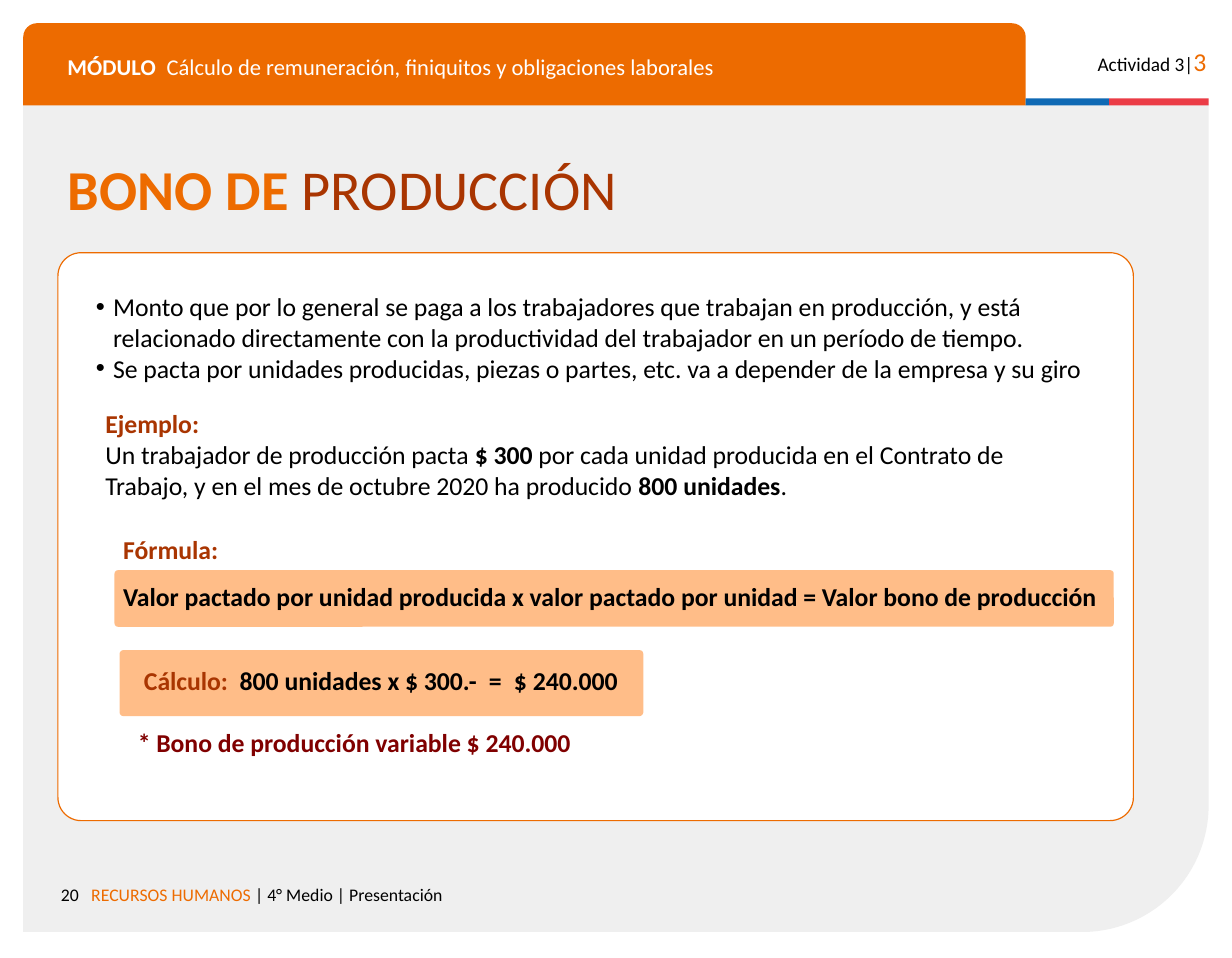
from dataclasses import dataclass

from lxml import etree
from pptx import Presentation
from pptx.dml.color import RGBColor
from pptx.enum.shapes import MSO_SHAPE
from pptx.enum.text import MSO_ANCHOR, PP_ALIGN
from pptx.oxml.ns import qn
from pptx.util import Cm, Pt

RECT, ROUNDED = MSO_SHAPE.RECTANGLE, MSO_SHAPE.ROUNDED_RECTANGLE
ONE_CORNER = MSO_SHAPE.ROUND_1_RECTANGLE
TOP_CORNERS = MSO_SHAPE.ROUND_2_SAME_RECTANGLE
LEFT, RIGHT = PP_ALIGN.LEFT, PP_ALIGN.RIGHT
TOP, MIDDLE = MSO_ANCHOR.TOP, MSO_ANCHOR.MIDDLE


@dataclass(frozen=True)
class Theme:
    font: str = "Calibri"
    bullet_font: str = "Arial"
    orange: str = "ED6B00"
    rust: str = "A93501"
    maroon: str = "800000"
    peach: str = "FFB375"
    grey: str = "EFEFEF"
    blue: str = "0F69B4"
    red: str = "EB3C46"
    black: str = "000000"
    white: str = "FFFFFF"
    title: int = 35
    body: int = 16
    header: int = 14
    activity: int = 12
    footer: int = 11


THEME = Theme()


@dataclass(frozen=True)
class Box:
    """A rectangle in centimetres."""
    left: float
    top: float
    width: float
    height: float

    def at(self, left, top, width, height):
        """Give a box placed from this box's top left corner."""
        return Box(self.left + left, self.top + top, width, height)

    def place(self, shape):
        for side in ("left", "top", "width", "height"):
            setattr(shape, side, Cm(getattr(self, side)))


def span(text, color=THEME.black, bold=False, size=THEME.body):
    return text, {"name": THEME.font, "size": Pt(size), "bold": bold}, color


def write(shape, paras, pad_x=0.25, pad_y=0.13, anchor=TOP, align=LEFT, spacing=1.0):
    """Fill a shape with paragraphs, each a list of spans."""
    frame = shape.text_frame
    settings = {
        "word_wrap": True, "vertical_anchor": anchor,
        "margin_left": Cm(pad_x), "margin_right": Cm(0.1),
        "margin_top": Cm(pad_y), "margin_bottom": Cm(pad_y),
    }
    if align == RIGHT:
        settings["margin_right"] = Cm(pad_x)
    for name, value in settings.items():
        setattr(frame, name, value)
    for index, spans in enumerate(paras):
        para = frame.add_paragraph() if index else frame.paragraphs[0]
        para.alignment, para.line_spacing = align, spacing
        for text, font, color in spans:
            run = para.add_run()
            run.text = text
            for name, value in font.items():
                setattr(run.font, name, value)
            run.font.color.rgb = RGBColor.from_string(color)
    return frame


def add_text(page, box, paras, **layout):
    shape = page.shapes.add_textbox(0, 0, 0, 0)
    box.place(shape)
    return write(shape, paras, **layout)


def add_block(page, kind, box, fill, corners=(), line=None):
    shape = page.shapes.add_shape(kind, 0, 0, 0, 0)
    box.place(shape)
    shape.shadow.inherit = False
    shape.fill.solid()
    shape.fill.fore_color.rgb = RGBColor.from_string(fill)
    if line:
        shape.line.color.rgb = RGBColor.from_string(line)
        shape.line.width = Pt(0.75)
    else:
        shape.line.fill.background()
    for index, corner in enumerate(corners):
        shape.adjustments[index] = corner
    return shape


def add_highlight(page, box, spans, pad_x):
    bar = add_block(page, ROUNDED, box, THEME.peach, [0.06])
    color = bar.element.spPr.find(qn("a:solidFill"))[0]
    etree.SubElement(color, qn("a:alpha"), val="86000")
    frame = write(bar, [spans], pad_x=pad_x, anchor=MIDDLE)
    frame.margin_bottom = Cm(0.25)
    return frame


def add_bullet(para):
    props = para._p.get_or_add_pPr()
    props.set("marL", str(Cm(0.38)))
    props.set("indent", str(-Cm(0.38)))
    etree.SubElement(props, qn("a:buFont"), typeface=THEME.bullet_font)
    etree.SubElement(props, qn("a:buChar"), char="•")


def add_tab_stops(para, *positions):
    tabs = etree.SubElement(para._p.get_or_add_pPr(), qn("a:tabLst"))
    for position in positions:
        etree.SubElement(tabs, qn("a:tab"), pos=str(Cm(position)), algn="l")


def build_background(page, box):
    panel = add_block(page, ONE_CORNER, box, THEME.grey, [0.153])
    panel.rotation = 180
    panel.element.spPr.find(qn("a:xfrm")).set("flipH", "1")


def build_header(page, box):
    band_width, blue_width = 21.97, 1.83
    red_left = band_width + blue_width
    add_block(page, TOP_CORNERS, box.at(0, 0, band_width, box.height),
              THEME.orange, [0.167, 0])
    for color, left, width in ((THEME.blue, band_width, blue_width),
                               (THEME.red, red_left, box.width - red_left)):
        add_block(page, RECT, box.at(left, 1.65, width, 0.15), color)
    module = add_text(page, box.at(0.72, 0.46, 20.68, 0.89), [[
        span("MÓDULO\t", THEME.white, True, THEME.header),
        span("Cálculo de remuneración, finiquitos y obligaciones laborales",
             THEME.white, size=THEME.header),
    ]], pad_y=0.25, spacing=0.9)
    add_tab_stops(module.paragraphs[0], 2.17)
    add_text(page, box.at(22.93, 0.25, 3.25, 0.97), [[
        span("Actividad 3|", size=THEME.activity),
        span("3", THEME.orange),
    ]], pad_y=0.25, align=RIGHT)


def build_title(page, box):
    """Fill the title placeholder and bring it in front of the background."""
    title = page.shapes.title
    title.element.getparent().append(title.element)
    box.place(title)
    write(title, [[span("BONO DE ", THEME.orange, True, THEME.title),
                   span("PRODUCCIÓN", THEME.rust, size=THEME.title)]])


def build_card(page, box):
    add_block(page, ROUNDED, box, THEME.white, [0.041], THEME.orange)
    points = add_text(page, box.at(0.58, 0.71, 22.4, 3.07), [
        [span("Monto que por lo general se paga a los trabajadores que trabajan "
              "en producción, y está relacionado directamente con la "
              "productividad del trabajador en un período de tiempo.")],
        [span("Se pacta por unidades producidas, piezas o partes, etc. "
              "va a depender de la empresa y su giro")],
    ])
    for para in points.paragraphs:
        add_bullet(para)
    add_text(page, box.at(0.79, 3.28, 21.87, 2.31), [
        [span("Ejemplo:", THEME.rust, True)],
        [span("Un trabajador de producción pacta "), span("$ 300 ", bold=True),
         span("por cada unidad producida en el Contrato de Trabajo, "
              "y en el mes de octubre 2020 ha producido "),
         span("800 unidades", bold=True), span(".")],
    ])
    add_text(page, box.at(1.18, 6.04, 8, 0.94),
             [[span("Fórmula:", THEME.rust, True)]])
    add_highlight(page, box.at(1.24, 6.96, 21.9, 1.24), [
        span("Valor pactado por unidad producida x valor pactado por unidad "
             "= Valor bono de producción", bold=True)], 0.17)
    result = add_highlight(page, box.at(1.35, 8.71, 11.48, 1.45), [
        span("Cálculo:\t", THEME.rust, True),
        span("800 unidades x $ 300.-\t=\t$ 240.000", bold=True)], 0.51)
    add_tab_stops(result.paragraphs[0], 2.1, 7.56, 8.11)
    add_text(page, box.at(1.5, 10.26, 13.49, 0.94), [
        [span("* Bono de producción variable $ 240.000", THEME.maroon, True)]])


def build_footer(page, box):
    add_text(page, box.at(0, 0, 1.47, box.height),
             [[span("20", size=THEME.footer)]], pad_y=0.25, align=RIGHT)
    add_text(page, box.at(1.24, 0, 18, box.height), [[
        span("RECURSOS HUMANOS ", THEME.orange, size=THEME.footer),
        span("| 4° Medio | Presentación", size=THEME.footer),
    ]], pad_y=0.25)


def main():
    deck = Presentation()
    deck.slide_width, deck.slide_height = Cm(27), Cm(21)
    page = deck.slides.add_slide(deck.slide_layouts[5])
    build_background(page, Box(0.51, 2.29, 25.98, 18.14))
    build_header(page, Box(0.51, 0.51, 25.98, 1.8))
    build_title(page, Box(1.24, 3.25, 24.51, 1.75))
    build_card(page, Box(1.27, 5.54, 23.57, 12.45))
    build_footer(page, Box(0.51, 19.13, 20, 0.97))
    deck.save("out.pptx")


if __name__ == "__main__":
    main()
